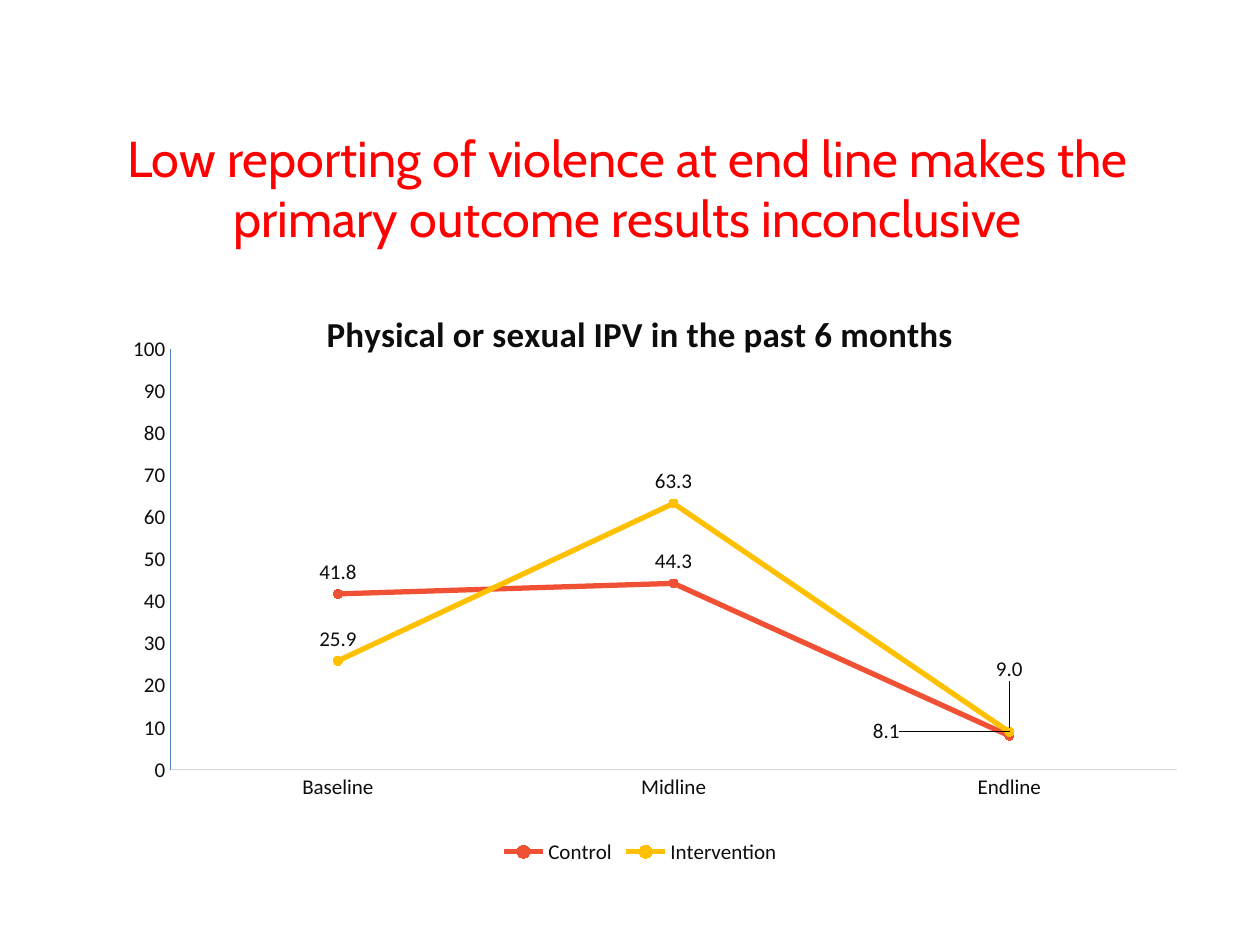
from pptx import Presentation
from pptx.chart.data import CategoryChartData
from pptx.dml.color import RGBColor
from pptx.enum import chart as ch, text
from pptx.oxml import parse_xml
from pptx.oxml.ns import nsdecls
from pptx.util import Pt

RED = RGBColor(0xFF, 0x00, 0x00)
INK = RGBColor(0x0D, 0x0D, 0x0D)
GRAY = RGBColor(0xD9, 0xD9, 0xD9)
BLUE = RGBColor(0x4F, 0x81, 0xBD)
CORAL = RGBColor(0xF0, 0x51, 0x34)
GOLD = RGBColor(0xFF, 0xC0, 0x00)

# name, values, colour, shift of the last label
SERIES = [
    ("Control", (41.8, 44.3, 8.1), CORAL, (-0.11, 0.03)),
    ("Intervention", (25.9, 63.3, 9.0), GOLD, (0, -0.07)),
]


def style(font, size, color, name="Calibri", bold=False):
    font.size, font.name, font.bold = Pt(size), name, bold
    font.color.rgb = color


def layout(x, y, w=None, h=None):
    """Manual chart layout, in fractions of the chart."""
    parts = ""
    if w:
        parts = '<c:layoutTarget val="inner"/>'
    if w or h is not None:
        parts += '<c:xMode val="edge"/><c:yMode val="edge"/>'
    parts += f'<c:x val="{x}"/><c:y val="{y}"/>'
    if w:
        parts += f'<c:w val="{w}"/><c:h val="{h}"/>'
    return parse_xml(f'<c:layout {nsdecls("c")}><c:manualLayout>{parts}'
                     '</c:manualLayout></c:layout>')


def add_title(slide, x, y, w, h):
    frame = slide.shapes.add_textbox(Pt(x), Pt(y), Pt(w), Pt(h)).text_frame
    frame.word_wrap = True
    para = frame.paragraphs[0]
    para.text = ("Low reporting of violence at end line makes the "
                 "primary outcome results inconclusive")
    para.alignment = text.PP_ALIGN.CENTER
    style(para.font, 28.8, RED, "Cabin")


def style_line(line, color, shift):
    line.smooth = False
    line.format.line.color.rgb = color
    line.format.line.width = Pt(3)
    mark = line.marker
    mark.style, mark.size = ch.XL_MARKER_STYLE.CIRCLE, 5
    mark.format.fill.solid()
    mark.format.fill.fore_color.rgb = color
    mark.format.line.color.rgb = color

    # Value labels; the last one is moved clear of the lines
    labels = line.data_labels
    labels.show_value = True
    labels.number_format = "#,##0.0"
    labels.number_format_is_linked = False
    labels.position = ch.XL_LABEL_POSITION.ABOVE
    style(labels.font, 12, INK)
    last = line.points[2].data_label
    style(last.font, 12, INK)
    last.position = ch.XL_LABEL_POSITION.ABOVE
    node = line.points[2].data_label._dLbl
    node.insert(1, layout(*shift))


def add_trend(slide, x, y, w, h):
    data = CategoryChartData(number_format="#,##0.0")
    data.categories = ["Baseline", "Midline", "Endline"]
    for name, vals, _, _ in SERIES:
        data.add_series(name, vals)
    chart = slide.shapes.add_chart(ch.XL_CHART_TYPE.LINE_MARKERS, Pt(x), Pt(y),
                                   Pt(w), Pt(h), data).chart
    style(chart.font, 12, INK)

    # Heading
    chart.has_title = True
    para = chart.chart_title.text_frame.paragraphs[0]
    para.text = "Physical or sexual IPV in the past 6 months"
    style(para.font, 20, INK, bold=True)
    head = chart.chart_title._element
    head.get_or_add_tx().addnext(layout(0.22, 0.05, h=0))
    chart.chart_title.include_in_layout = True

    # Legend
    chart.has_legend = True
    chart.legend.position = ch.XL_LEGEND_POSITION.BOTTOM
    chart.legend.include_in_layout = False
    style(chart.legend.font, 12, INK)

    # Axes
    for axis, color in ((chart.category_axis, GRAY), (chart.value_axis, BLUE)):
        axis.has_major_gridlines = False
        axis.major_tick_mark = axis.minor_tick_mark = ch.XL_TICK_MARK.NONE
        axis.format.line.color.rgb = color
        axis.format.line.width = Pt(0.75)
        style(axis.tick_labels.font, 12, INK)
    scale = chart.value_axis
    scale.minimum_scale, scale.maximum_scale, scale.major_unit = 0, 100, 10
    scale.tick_labels.number_format = "0"
    scale.tick_labels.number_format_is_linked = False

    # Plot area and lines
    area = chart._chartSpace.chart.plotArea
    for old in area.xpath("c:layout"):
        area.remove(old)
    area.insert(0, layout(0.08, 0.11, 0.9, 0.72))
    plot = chart.plots[0]
    plot.vary_by_categories = False
    for line, (_, _, color, shift) in zip(plot.series, SERIES):
        style_line(line, color, shift)


def main():
    deck = Presentation()
    deck.slide_width, deck.slide_height = Pt(720), Pt(540)
    slide = deck.slides.add_slide(deck.slide_layouts[6])
    add_title(slide, 32.4, 69.1, 652.3, 41)
    add_trend(slide, 46.1, 162.7, 639.4, 334.1)
    deck.save("out.pptx")


if __name__ == "__main__":
    main()
